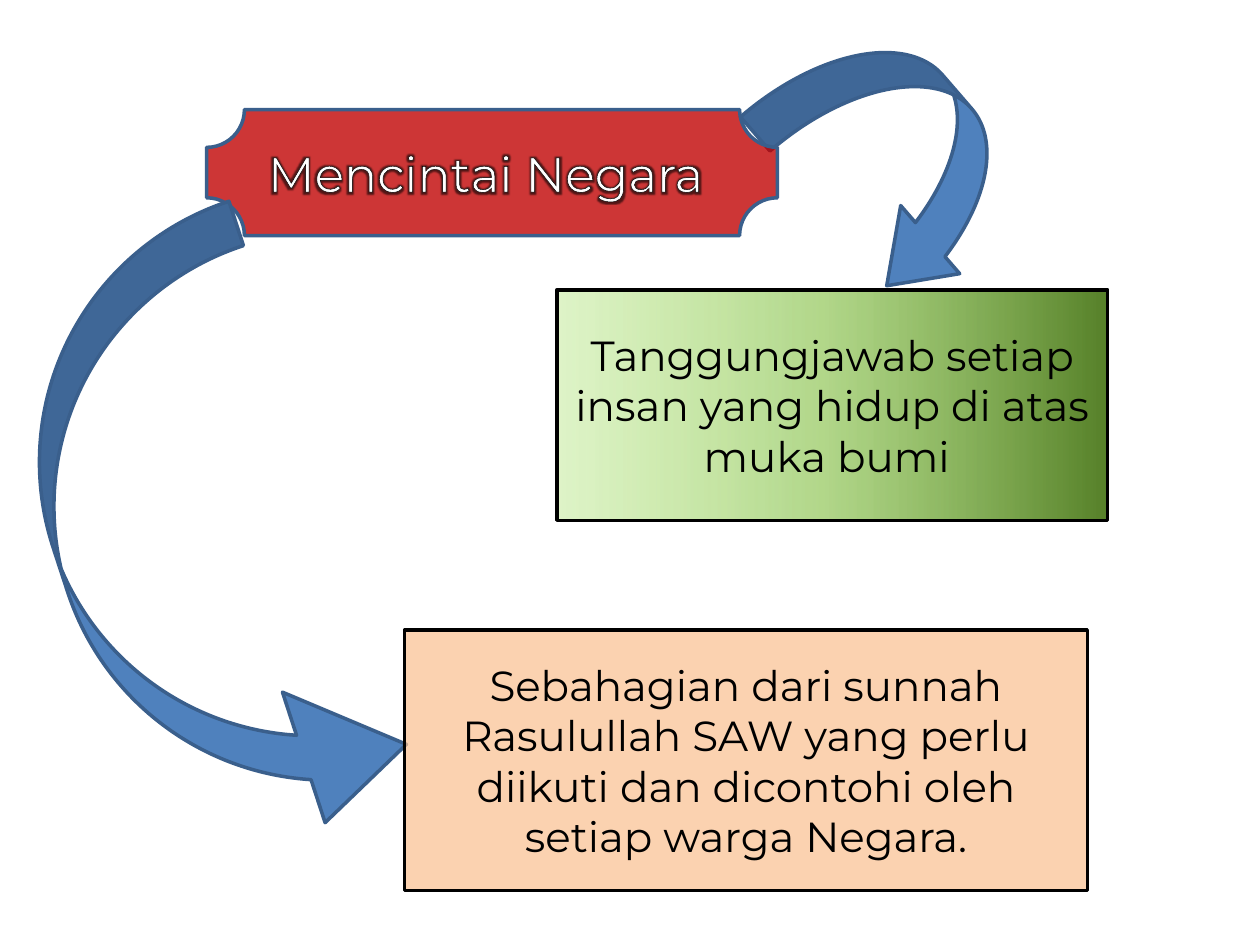
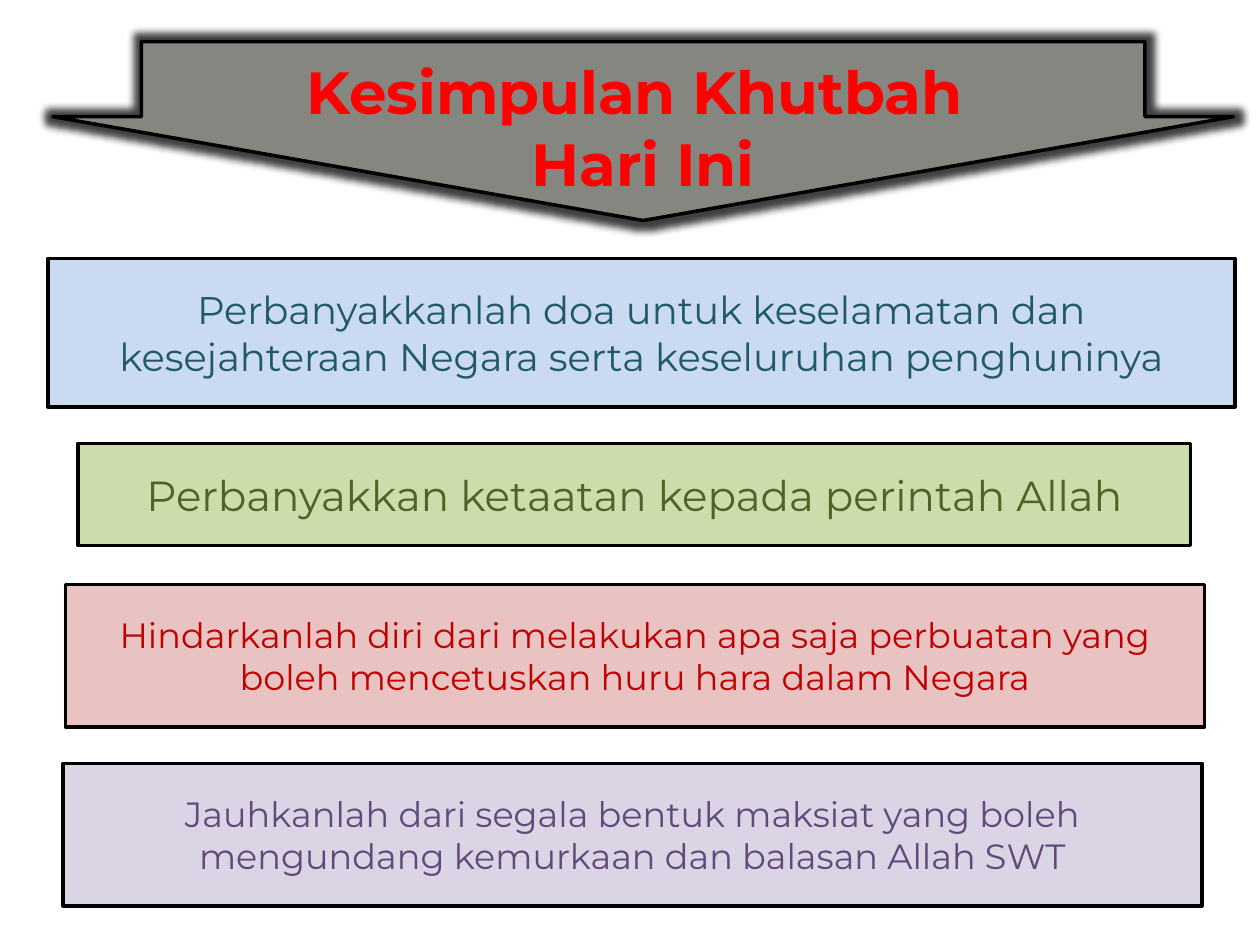
from lxml import etree
from pptx import Presentation
from pptx.dml.color import RGBColor
from pptx.enum.shapes import MSO_SHAPE
from pptx.enum.text import MSO_ANCHOR, PP_ALIGN
from pptx.oxml import parse_xml
from pptx.oxml.ns import nsdecls, qn
from pptx.util import Inches, Pt

RECTANGLE = MSO_SHAPE.RECTANGLE
PLAQUE = MSO_SHAPE.PLAQUE
DOWN_ARROW = MSO_SHAPE.DOWN_ARROW
LEFT_CURVE = MSO_SHAPE.CURVED_LEFT_ARROW
RIGHT_CURVE = MSO_SHAPE.CURVED_RIGHT_ARROW
TOP = MSO_ANCHOR.TOP
MIDDLE = MSO_ANCHOR.MIDDLE
CENTER = PP_ALIGN.CENTER

FONT = "Montserrat"
BLACK = RGBColor(0x00, 0x00, 0x00)
WHITE = RGBColor(0xFF, 0xFF, 0xFF)
RED = RGBColor(0xFF, 0x00, 0x00)
DARK_RED = RGBColor(0xC0, 0x00, 0x00)
BLUE = RGBColor(0x4F, 0x81, 0xBD)
BLUE_EDGE = RGBColor(0x3A, 0x5F, 0x8C)
PEACH = RGBColor(0xFA, 0xC0, 0x90)
GREY = RGBColor(0x86, 0x86, 0x80)
GREEN_STOPS = [(0, "57812A", 100), (50, "7EBB3D", 61), (100, "92DA46", 29)]

TITLE = "Mencintai Negara "
TITLE_BOX = (1.64, 0.87, 4.53, 1)
DUTY = "Tanggungjawab setiap insan yang hidup di atas muka bumi "
DUTY_BOX = (4.42, 2.3, 4.37, 1.83)
SUNNAH = ("Sebahagian dari sunnah Rasulullah SAW yang perlu diikuti "
          "dan dicontohi oleh setiap warga Negara.")
SUNNAH_BOX = (3.21, 5, 5.42, 2.07)
# shape, box, rotation, adjustments
ARROW_TO_DUTY = (LEFT_CURVE, (6.4, 0.2, 1.43, 2.13), 319.1, (0.25, 0.5, 0.35))
ARROW_TO_SUNNAH = (RIGHT_CURVE, (0.48, 1.81, 2.18, 5.08), 341.9, (0.17, 0.5, 0.37))

CONCLUSION = ["Kesimpulan Khutbah ", "Hari Ini"]
CONCLUSION_BOX = (0.42, 0.33, 9.37, 1.42)
# text, box, fill, opacity in percent, text colour, text size
ADVICE = [
    ("Perbanyakkanlah doa untuk keselamatan dan kesejahteraan Negara "
     "serta keseluruhan penghuninya",
     (0.38, 2.05, 9.42, 1.18), RGBColor(0xC6, 0xD9, 0xF1), 93,
     RGBColor(0x21, 0x59, 0x68), 22),
    ("Perbanyakkan ketaatan kepada perintah Allah",
     (0.62, 3.52, 8.83, 0.81), RGBColor(0xC3, 0xD6, 0x9B), 83,
     RGBColor(0x4F, 0x62, 0x28), 24),
    ("Hindarkanlah diri dari melakukan apa saja perbuatan yang boleh "
     "mencetuskan huru hara dalam Negara",
     (0.52, 4.64, 9.04, 1.13), RGBColor(0xE6, 0xB9, 0xB8), 85, DARK_RED, 20),
    ("Jauhkanlah dari segala bentuk maksiat yang boleh mengundang "
     "kemurkaan dan balasan Allah SWT",
     (0.5, 6.06, 9.04, 1.13), RGBColor(0xCC, 0xC1, 0xDA), 69,
     RGBColor(0x60, 0x4A, 0x7B), 20),
]


def add_panel(slide, kind, box, fill, line=BLACK, opacity=100, adjustments=()):
    shape = slide.shapes.add_shape(kind, *map(Inches, box))
    shape.shadow.inherit = False
    for index, value in enumerate(adjustments):
        shape.adjustments[index] = value
    shape.fill.solid()
    shape.fill.fore_color.rgb = fill
    if opacity < 100:
        color = shape.fill._xPr.find(qn("a:solidFill"))[0]
        etree.SubElement(color, qn("a:alpha"), val=str(opacity * 1000))
    shape.line.color.rgb = line
    shape.line.width = Pt(2)
    return shape


def write(shape, lines, size, color, bold=False, anchor=MIDDLE):
    frame = shape.text_frame
    frame.word_wrap = True
    frame.vertical_anchor = anchor
    frame.text = "\n".join(lines)
    for paragraph in frame.paragraphs:
        paragraph.alignment = CENTER
        paragraph.font.name = FONT
        paragraph.font.size = Pt(size)
        paragraph.font.bold = bold
        paragraph.font.color.rgb = color


def glow(radius, opacity):
    return parse_xml(
        f'<a:glow {nsdecls("a")} rad="{Pt(radius)}"><a:srgbClr val="{BLACK}">'
        f'<a:alpha val="{opacity * 1000}"/></a:srgbClr></a:glow>')


def outline_text(paragraph, color, width):
    """Outline the letters and put a soft dark halo behind them."""
    paragraph.font._element.insert(0, parse_xml(
        f'<a:ln {nsdecls("a")} w="{Pt(width)}"><a:solidFill>'
        f'<a:srgbClr val="{color}"/></a:solidFill></a:ln>'))
    for run in paragraph.runs:
        effects = etree.SubElement(run.font._element, qn("a:effectLst"))
        effects.append(glow(4, 60))


def fade(shape, stops):
    """Replace the fill by a gradient running from right to left."""
    stop_list = "".join(
        f'<a:gs pos="{position * 1000}"><a:srgbClr val="{color}">'
        f'<a:alpha val="{opacity * 1000}"/></a:srgbClr></a:gs>'
        for position, color, opacity in stops)
    properties = shape.fill._xPr
    properties.replace(properties.find(qn("a:solidFill")), parse_xml(
        f'<a:gradFill {nsdecls("a")} rotWithShape="1"><a:gsLst>{stop_list}</a:gsLst>'
        '<a:lin ang="10800000" scaled="0"/></a:gradFill>'))


def add_curved_arrow(slide, kind, box, rotation, adjustments):
    arrow = add_panel(slide, kind, box, BLUE, BLUE_EDGE, adjustments=adjustments)
    arrow.rotation = rotation


def build_love_of_country(slide):
    duty = add_panel(slide, RECTANGLE, DUTY_BOX, WHITE)
    fade(duty, GREEN_STOPS)
    write(duty, [DUTY], 24, BLACK)

    add_curved_arrow(slide, *ARROW_TO_DUTY)
    title = add_panel(slide, PLAQUE, TITLE_BOX, DARK_RED, BLUE_EDGE, 79, [0.3])
    write(title, [TITLE], 28, WHITE)
    outline_text(title.text_frame.paragraphs[0], BLACK, 0.75)
    add_curved_arrow(slide, *ARROW_TO_SUNNAH)

    sunnah = add_panel(slide, RECTANGLE, SUNNAH_BOX, PEACH, opacity=71)
    write(sunnah, [SUNNAH], 24, BLACK)


def build_conclusion(slide):
    banner = add_panel(slide, DOWN_ARROW, CONCLUSION_BOX, GREY,
                       adjustments=(0.85, 0.58))
    banner.fill._xPr.find(qn("a:effectLst")).append(glow(8, 75))
    write(banner, CONCLUSION, 34, RED, bold=True, anchor=TOP)
    banner.text_frame.margin_top = Inches(0.11)

    for text, box, fill, opacity, color, size in ADVICE:
        panel = add_panel(slide, RECTANGLE, box, fill, opacity=opacity)
        write(panel, [text], size, color)


def main():
    presentation = Presentation()
    presentation.slide_width = Inches(10)
    presentation.slide_height = Inches(7.5)
    blank = presentation.slide_layouts[6]
    for build in (build_love_of_country, build_conclusion):
        build(presentation.slides.add_slide(blank))
    presentation.save("out.pptx")


if __name__ == "__main__":
    main()
